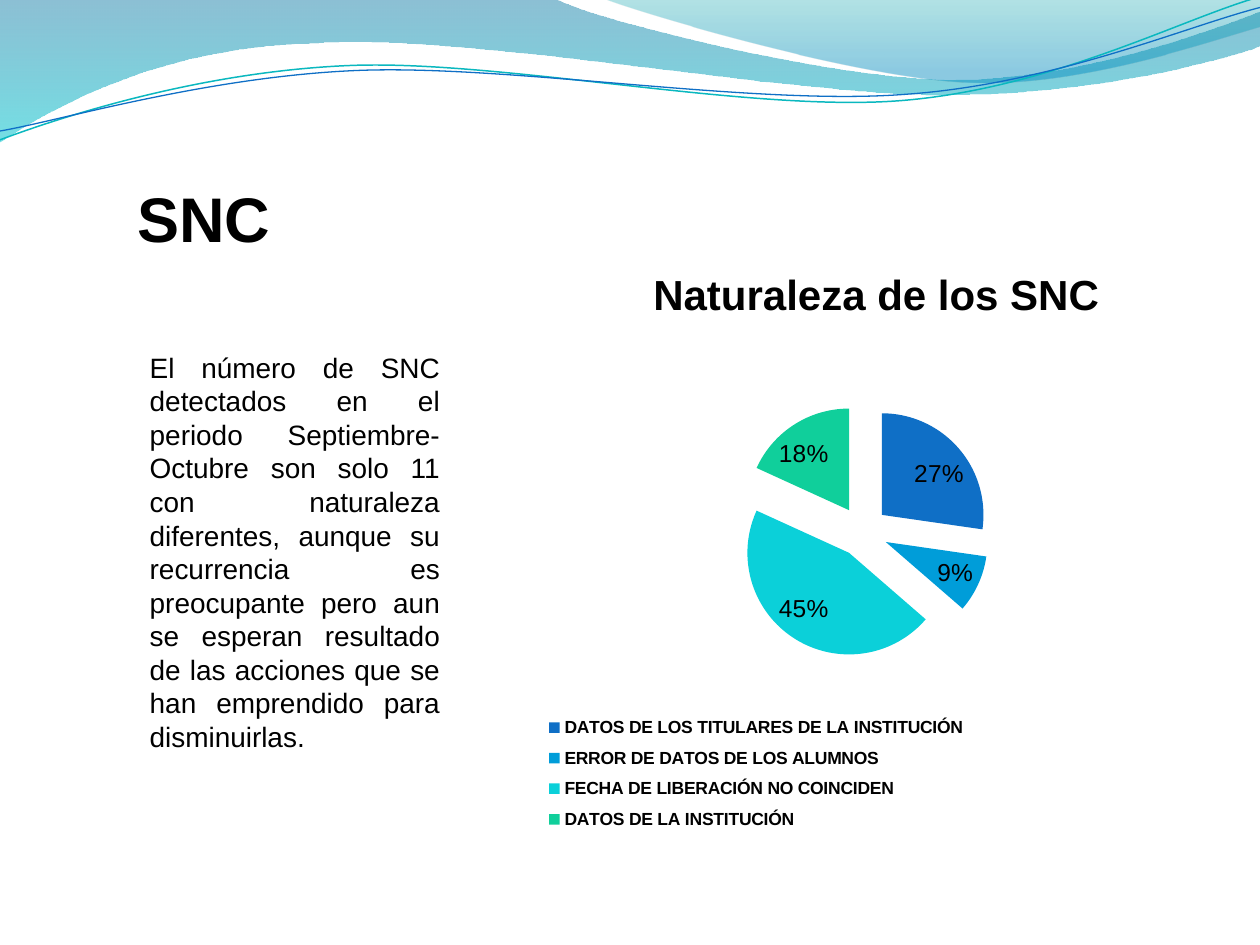
import math

import pptx
import pptx.chart.data
import pptx.dml.color
import pptx.enum.chart
import pptx.enum.text
import pptx.oxml
import pptx.oxml.ns
import pptx.util
from lxml import etree

RGBColor = pptx.dml.color.RGBColor
Inches = pptx.util.Inches
Pt = pptx.util.Pt
qn = pptx.oxml.ns.qn

BLACK = RGBColor(0x00, 0x00, 0x00)
DEEP_BLUE = RGBColor(0x00, 0x74, 0xA1)
AQUA = RGBColor(0x00, 0xC6, 0xCF)
TEAL = RGBColor(0x00, 0xA1, 0xA9)
SKY = RGBColor(0x00, 0x8B, 0xBF)
TEAL_LINE = RGBColor(0x0A, 0xB8, 0xBF)
BLUE = RGBColor(0x0F, 0x6F, 0xC6)
SLICE_COLOURS = [BLUE, RGBColor(0x00, 0x9D, 0xD9),
                 RGBColor(0x0B, 0xD0, 0xD9), RGBColor(0x10, 0xCF, 0x9B)]

WIDTH, HEIGHT = 10, 7.5
WAVE_TILT = -2.7

# Outlines: two numbers are a straight segment, six a Bezier curve
LONG_WAVE = [
    (0, 0), (4.4, -0.01), (4.76, 0.17, 6.64, 0.63, 7.58, 0.63),
    (8.53, 0.63, 9.58, 0.26, 10, 0.09), (10.01, 0.36),
    (9.83, 0.44, 8.7, 0.76, 7.46, 0.75), (6.22, 0.75, 3.82, 0.28, 2.57, 0.34),
    (1.29, 0.36, 0.46, 0.83, -0.01, 1.13)]
RIGHT_WAVE = [
    (4.79, -0.01), (5.09, 0.11, 6.82, 0.62, 7.69, 0.65),
    (8.56, 0.69, 9.61, 0.32, 10, 0.21), (10, 0)]
TEAL_CURVE = [
    (0, 1.11), (0.48, 0.93, 1.58, 0.57, 2.77, 0.52),
    (3.95, 0.47, 5.93, 0.89, 7.13, 0.8), (8.33, 0.71, 9.38, 0.15, 9.98, -0.02)]
BLUE_CURVE = [
    (0, 1.04), (0.47, 0.96, 1.64, 0.61, 2.83, 0.56),
    (4.03, 0.51, 5.97, 0.84, 7.17, 0.75), (8.36, 0.67, 9.41, 0.21, 10, 0.06)]

BODY_TEXT = (
    "El número de SNC detectados en el periodo Septiembre-Octubre son solo 11 "
    "con naturaleza diferentes, aunque su recurrencia es preocupante pero aun se "
    "esperan resultado de las acciones que se han emprendido para disminuirlas.")
CATEGORIES = ["DATOS DE LOS TITULARES DE LA INSTITUCIÓN",
              "ERROR DE DATOS DE LOS ALUMNOS",
              "FECHA DE LIBERACIÓN NO COINCIDEN",
              "DATOS DE LA INSTITUCIÓN"]


def share_box(left, top, width, height):
    """Turn shares of the slide's size into lengths."""
    return (Inches(left * WIDTH), Inches(top * HEIGHT),
            Inches(width * WIDTH), Inches(height * HEIGHT))


def format_font(font, size, bold=False):
    font.name = "Arial"
    font.size = Pt(size)
    font.bold = bold
    font.color.rgb = BLACK


def rotate(point, centre, degrees):
    cosine, sine = math.cos(math.radians(degrees)), math.sin(math.radians(degrees))
    x, y = point[0] - centre[0], point[1] - centre[1]
    return (centre[0] + x * cosine - y * sine, centre[1] + x * sine + y * cosine)


def add_outline(slide, outline, close, centre=(0, 0), tilt=0):
    """Draw straight segments through all points, then bend the curved ones."""
    points = [rotate(segment[i:i + 2], centre, -tilt)
              for segment in outline for i in range(0, len(segment), 2)]
    places = [(Inches(x), Inches(y)) for x, y in points]
    builder = slide.shapes.build_freeform(*places[0])
    builder.add_line_segments(places[1:], close=close)
    shape = builder.convert_to_shape()
    shape.shadow.inherit = False
    shape.rotation = tilt
    lines = iter(list(shape.element.iter(qn("a:lnTo"))))
    for segment in outline[1:]:
        parts = [next(lines) for _ in range(len(segment) // 2)]
        if len(parts) == 3:
            curve = etree.Element(qn("a:cubicBezTo"))
            parts[0].addprevious(curve)
            for part in parts:
                curve.append(part[0])
                part.getparent().remove(part)
    return shape


def add_wave(slide, outline, stops):
    shape = add_outline(slide, outline, True)
    shape.line.fill.background()
    shape.fill.gradient()
    shape.fill.gradient_angle = 270
    for stop, (position, colour, _) in zip(shape.fill.gradient_stops, stops):
        stop.position = position
        stop.color.rgb = colour
    colours = shape.element.spPr.iter(qn("a:srgbClr"))
    for colour, (_, _, opacity) in zip(colours, stops):
        etree.SubElement(colour, qn("a:alpha")).set("val", str(opacity * 1000))


def add_wave_line(slide, outline, centre, colour, width):
    shape = add_outline(slide, outline, False, centre, WAVE_TILT)
    shape.fill.background()
    shape.line.color.rgb = colour
    shape.line.width = Pt(width)


def add_header(slide):
    add_wave(slide, LONG_WAVE, [(0, DEEP_BLUE, 45), (1, AQUA, 55)])
    add_wave(slide, RIGHT_WAVE, [(0, TEAL, 30), (0.8, SKY, 45)])
    add_wave_line(slide, TEAL_CURVE, (4.99, 0.57), TEAL_LINE, 0.85)
    add_wave_line(slide, BLUE_CURVE, (5, 0.59), BLUE, 0.75)


def place_title(title, box):
    title.left, title.top, title.width, title.height = box
    frame = title.text_frame
    frame.text = "SNC"
    frame.auto_size = pptx.enum.text.MSO_AUTO_SIZE.NONE
    frame.vertical_anchor = pptx.enum.text.MSO_ANCHOR.BOTTOM
    frame.margin_left = frame.margin_right = frame.margin_bottom = 0
    frame.margin_top = Inches(0.05)
    paragraph = frame.paragraphs[0]
    paragraph.alignment = pptx.enum.text.PP_ALIGN.LEFT
    format_font(paragraph.runs[0].font, 36, True)


def add_body(slide, box):
    frame = slide.shapes.add_textbox(*box).text_frame
    frame.word_wrap = True
    frame.text = BODY_TEXT
    paragraph = frame.paragraphs[0]
    paragraph.alignment = pptx.enum.text.PP_ALIGN.JUSTIFY
    paragraph.line_spacing = Pt(19.2)
    format_font(paragraph.runs[0].font, 16)


def set_layout(parent, index, target="", **shares):
    """Fix the place of a chart part, in shares of the chart's size."""
    for old in parent.findall(qn("c:layout")):
        parent.remove(old)
    layout = etree.Element(qn("c:layout"))
    manual = etree.SubElement(layout, qn("c:manualLayout"))
    values = {"layoutTarget": target} if target else {}
    values.update(xMode="edge", yMode="edge", **shares)
    for name, value in values.items():
        etree.SubElement(manual, qn("c:" + name)).set("val", str(value))
    parent.insert(index, layout)


def add_pie(slide, box):
    data = pptx.chart.data.CategoryChartData()
    data.categories = CATEGORIES
    data.add_series("Series 1", [27, 9, 45, 18])
    chart = slide.shapes.add_chart(
        pptx.enum.chart.XL_CHART_TYPE.PIE, *box, data).chart
    chart.font.name = "TeX Gyre Pagella"
    chart.font.size = Pt(10)
    chart.font.color.rgb = BLACK

    # Title and legend
    chart.has_title = True
    chart.chart_title.text_frame.text = "Naturaleza de los SNC"
    format_font(chart.chart_title.text_frame.paragraphs[0].runs[0].font, 24, True)
    chart.has_legend = True
    chart.legend.position = pptx.enum.chart.XL_LEGEND_POSITION.TOP
    chart.legend.include_in_layout = False
    format_font(chart.legend.font, 10, True)

    # Slices and labels
    plot = chart.plots[0]
    plot.vary_by_categories = True
    series = plot.series[0]
    explosion = etree.Element(qn("c:explosion"), val="25")
    series._element.find(qn("c:cat")).addprevious(explosion)
    for index, colour in enumerate(SLICE_COLOURS):
        fill = series.points[index].format.fill
        fill.solid()
        fill.fore_color.rgb = colour
    labels = series.data_labels
    labels.show_percentage = True
    labels.show_value = False
    labels.number_format = "0%"
    labels.number_format_is_linked = False
    labels.position = pptx.enum.chart.XL_LABEL_POSITION.BEST_FIT
    format_font(labels.font, 14)

    # Fixed places of the title, the pie and the legend
    root = chart.element.find(qn("c:chart"))
    set_layout(root.find(qn("c:title")), 1, x=0.18, y=0.04)
    set_layout(root.find(qn("c:plotArea")), 0, "inner", x=0.09, y=0.28, w=0.81, h=0.42)
    set_layout(root.find(qn("c:legend")), 1, x=0, y=0.78, w=0.68, h=0.22)


def main():
    presentation = pptx.Presentation()
    presentation.slide_width, presentation.slide_height = Inches(WIDTH), Inches(HEIGHT)
    slide = presentation.slides.add_slide(presentation.slide_layouts[5])
    add_header(slide)
    place_title(slide.shapes.title, share_box(0.109, 0.103, 0.841, 0.167))
    add_body(slide, share_box(0.109, 0.364, 0.25, 0.444))
    add_pie(slide, share_box(0.414, 0.249, 0.547, 0.64))
    presentation.save("out.pptx")


if __name__ == "__main__":
    main()
